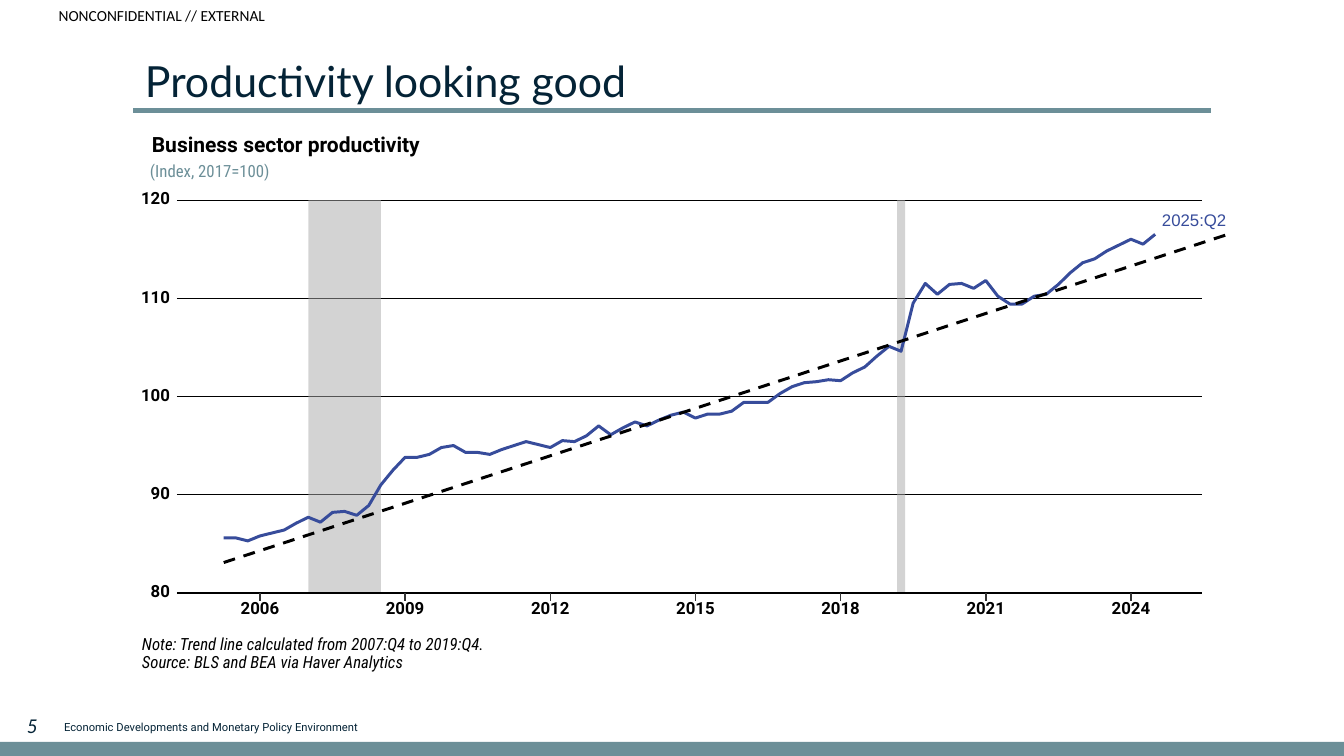
from lxml import etree
from pptx import Presentation
from pptx import util as u
from pptx.dml.color import RGBColor
from pptx.enum import dml, shapes, text
from pptx.oxml import ns

COLORS = {"teal": "6C8F98", "navy": "042336", "black": "000000", "white": "FFFFFF",
          "blue": "374C9B", "gray": "A9A9A9", "tick": "333333"}
EMU_PER_PX = 914400 / 100.8

PRODUCTIVITY = [
    85.6, 85.6, 85.3, 85.8, 86.1, 86.4, 87.1, 87.7, 87.2, 88.2, 88.3, 87.9, 88.9,
    91.0, 92.5, 93.8, 93.8, 94.1, 94.8, 95.0, 94.3, 94.3, 94.1, 94.6, 95.0, 95.4,
    95.1, 94.8, 95.5, 95.4, 96.0, 97.0, 96.1, 96.8, 97.4, 97.0, 97.6, 98.1, 98.4,
    97.8, 98.2, 98.2, 98.5, 99.4, 99.4, 99.4, 100.3, 101.0, 101.4, 101.5, 101.7, 101.6,
    102.4, 103.0, 104.1, 105.1, 104.6, 109.5, 111.5, 110.4, 111.4, 111.5, 111.0, 111.8, 110.2,
    109.4, 109.4, 110.2, 110.4, 111.4, 112.6, 113.6, 114.0, 114.8, 115.4, 116.0, 115.5, 116.5,
]
TREND = [(0, 83.1), (83, 116.5)]
RECESSIONS = [(7, 13), (55.67, 56.33)]
LEVELS = range(80, 121, 10)
YEARS = range(2006, 2025, 3)
FIRST_YEAR_QUARTER = 3

PLOT_LEFT, PLOT_RIGHT, PLOT_TOP, PLOT_BOTTOM = 177, 1202, 200, 593
YEAR_LEFT, YEAR_RIGHT = 260, 1131
QUARTER_WIDTH = (YEAR_RIGHT - YEAR_LEFT) / (4 * (YEARS[-1] - YEARS[0]))

RECTANGLES = [
    ((0, 742, 1344, 15), "teal", None),
    ((134, 109, 1076, 3), "teal", 1),
    ((134, 133, 1076, 549), "white", 1.07),
]
PAGE_TEXTS = [
    ("5", (27, 709, 21, 33), "Lato", 13.5, "navy", "i", "left"),
    ("Economic Developments and Monetary Policy Environment",
     (64, 715, 296, 24), "Roboto", 8, "navy", "", "left"),
    ("NONCONFIDENTIAL // EXTERNAL", (0, 6, 324, 19), "Calibri", 11, "black", "", "center"),
    ("Productivity looking good", (145, 56, 1170, 56), "Lato", 30.6, "navy", "", "left"),
]
CHART_TEXTS = [
    ("Business sector productivity", (142, 137, 288, 19), "Roboto", 15, "black", "b", "center"),
    ("(Index, 2017=100)", (150, 164, 120, 17), "Roboto Condensed", 12, "teal", "", "left"),
    ("2025:Q2", (1162, 215, 65, 13), "Arial", 12, "blue", "", "left"),
    ("Note: Trend line calculated from 2007:Q4 to 2019:Q4.",
     (142, 638, 344, 15), "Roboto Condensed", 12, "black", "i", "left"),
    ("Source: BLS and BEA via Haver Analytics",
     (142, 655, 262, 16), "Roboto Condensed", 12, "black", "i", "left"),
]
ALIGNMENTS = {"left": text.PP_ALIGN.LEFT, "center": text.PP_ALIGN.CENTER,
              "right": text.PP_ALIGN.RIGHT}


def px(length):
    return u.Emu(round(length * EMU_PER_PX))


def color(name):
    return RGBColor.from_string(COLORS[name])


def quarter_x(quarter):
    return YEAR_LEFT + (quarter - FIRST_YEAR_QUARTER) * QUARTER_WIDTH


def index_y(value):
    span = LEVELS[-1] - LEVELS[0]
    return PLOT_BOTTOM - (value - LEVELS[0]) * (PLOT_BOTTOM - PLOT_TOP) / span


def add_rectangle(page, place, fill, line_width=None, alpha=None):
    shape = page.shapes.add_shape(shapes.MSO_SHAPE.RECTANGLE, *map(px, place))
    shape.shadow.inherit = False
    shape.fill.solid()
    shape.fill.fore_color.rgb = color(fill)
    if line_width:
        shape.line.color.rgb = color(fill)
        shape.line.width = u.Pt(line_width)
        outline = shape._element.spPr.find(ns.qn("a:ln"))
        etree.SubElement(outline, ns.qn("a:miter")).set("lim", "800000")
    else:
        shape.line.fill.background()
    if alpha:
        tint = shape.fill._xPr.find(".//" + ns.qn("a:srgbClr"))
        etree.SubElement(tint, ns.qn("a:alpha")).set("val", str(alpha * 1000))


def add_line(page, start, end, name, width, dashed=False):
    line = page.shapes.add_connector(shapes.MSO_CONNECTOR.STRAIGHT, *map(px, start + end))
    line.line.color.rgb = color(name)
    line.line.width = u.Pt(width)
    if dashed:
        line.line.dash_style = dml.MSO_LINE.DASH
    etree.SubElement(line._element.spPr, ns.qn("a:effectLst"))


def add_curve(page, points, name, width):
    corners = [(px(x), px(y)) for x, y in points]
    builder = page.shapes.build_freeform(*corners[0], scale=1.0)
    builder.add_line_segments(corners[1:], close=False)
    curve = builder.convert_to_shape()
    curve.shadow.inherit = False
    curve.fill.background()
    curve.line.color.rgb = color(name)
    curve.line.width = u.Pt(width)


def add_text(page, words, place, font, size, name, style, align, spacing=None):
    box = page.shapes.add_textbox(*map(px, place))
    frame = box.text_frame
    frame.word_wrap = False
    frame.margin_left = frame.margin_right = frame.margin_top = frame.margin_bottom = 0
    frame.vertical_anchor = text.MSO_ANCHOR.MIDDLE
    para = frame.paragraphs[0]
    para.alignment = ALIGNMENTS[align]
    if spacing:
        para.line_spacing = spacing
    span = para.add_run()
    span.text = words
    span.font.name = font
    span.font.size = u.Pt(size)
    span.font.color.rgb = color(name)
    span.font.bold = "b" in style
    span.font.italic = "i" in style


def add_axis_label(page, words, place, align):
    add_text(page, words, place, "Roboto", 12, "black", "b", align, u.Pt(12))


def main():
    deck = Presentation()
    deck.slide_width, deck.slide_height = px(1344), px(756)
    page = deck.slides.add_slide(deck.slide_layouts[6])

    for place, fill, line_width in RECTANGLES:
        add_rectangle(page, place, fill, line_width)
    for item in PAGE_TEXTS:
        add_text(page, *item, spacing=0.9 if item[3] > 30 else None)

    for level in LEVELS:
        y = index_y(level)
        add_line(page, (PLOT_LEFT, y), (PLOT_RIGHT, y), "black", 0.53)
        add_axis_label(page, str(level), (134, y - 6, 36, 12), "right")
    for start, end in RECESSIONS:
        left, right = quarter_x(start), quarter_x(end)
        place = (left, PLOT_TOP, right - left, PLOT_BOTTOM - PLOT_TOP)
        add_rectangle(page, place, "gray", alpha=50)

    points = [(quarter_x(q), index_y(value)) for q, value in enumerate(PRODUCTIVITY)]
    add_curve(page, points, "blue", 2.13)
    trend_start, trend_end = [(quarter_x(q), index_y(value)) for q, value in TREND]
    add_line(page, trend_start, trend_end, "black", 2.13, dashed=True)

    add_line(page, (PLOT_LEFT, PLOT_BOTTOM), (PLOT_RIGHT, PLOT_BOTTOM), "black", 1.07)
    for year in YEARS:
        x = quarter_x(FIRST_YEAR_QUARTER + 4 * (year - YEARS[0]))
        add_line(page, (x, PLOT_BOTTOM + 8), (x, PLOT_BOTTOM), "tick", 1.07)
        add_axis_label(page, str(year), (x - 24, 604, 48, 12), "center")
    for item in CHART_TEXTS:
        add_text(page, *item, spacing=u.Pt(item[3]))

    deck.save("out.pptx")


if __name__ == "__main__":
    main()
